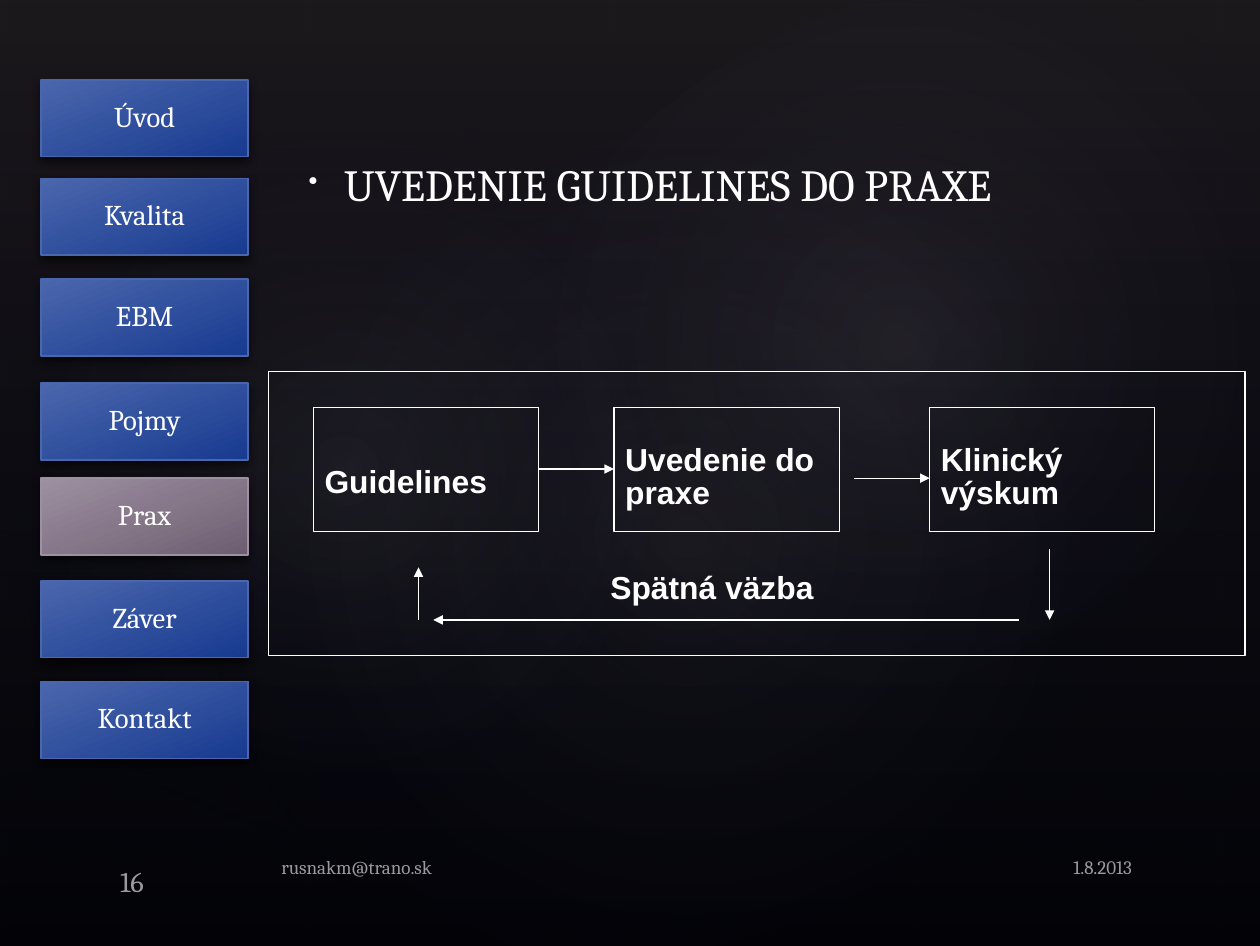
"""Builds the slide on putting guidelines into practice, on a grid of 0.1 inch cells."""
from typing import NamedTuple

from lxml.etree import SubElement
from pptx import Presentation
from pptx.dml.color import RGBColor
from pptx.enum.shapes import MSO_CONNECTOR, MSO_SHAPE
from pptx.enum.text import MSO_ANCHOR, PP_ALIGN
from pptx.oxml.ns import qn
from pptx.util import Inches, Pt

WHITE = RGBColor(0xFF, 0xFF, 0xFF)
BLACK = RGBColor(0x00, 0x00, 0x00)
NAVY = RGBColor(0x24, 0x28, 0x52)
PLUM = RGBColor(0x50, 0x46, 0x52)
MIST = RGBColor(0xC4, 0xBC, 0xC6)
BLUE = RGBColor(0x4A, 0x66, 0xAC)
DEEP = RGBColor(0x18, 0x3A, 0x90)
MAUVE = RGBColor(0x9D, 0x90, 0xA0)
DUSK = RGBColor(0x6E, 0x5E, 0x72)

CELL = Inches(0.1)
COLS, ROWS = 110.2, 82.7


class Area(NamedTuple):
    left: float
    top: float
    width: float
    height: float


class Glow(NamedTuple):
    area: Area
    turn: float
    alpha: int


class Button(NamedTuple):
    text: str
    top: float
    light: RGBColor = BLUE
    dark: RGBColor = DEEP


class Step(NamedTuple):
    text: str
    left: float
    inset: float


class Arrow(NamedTuple):
    x1: float
    y1: float
    x2: float
    y2: float


class Label(NamedTuple):
    text: str
    area: Area
    size: int
    align: PP_ALIGN = PP_ALIGN.LEFT
    anchor: MSO_ANCHOR = MSO_ANCHOR.TOP
    foot: float = 0.6


GLOWS = [
    Glow(Area(16.5, 12.5, 87.3, 68.8), 328.7, 7),
    Glow(Area(-3.3, 14.1, 66.8, 54), 294.3, 8),
    Glow(Area(39.5, 1.4, 78.1, 57.3), 328.7, 8),
]
BUTTONS = [
    Button("Úvod", 7),
    Button("Kvalita", 15.6),
    Button("EBM", 24.4),
    Button("Pojmy", 33.5),
    Button("Prax", 41.8, MAUVE, DUSK),
    Button("Záver", 50.8),
    Button("Kontakt", 59.6),
]
STEPS = [
    Step("Guidelines", 27.4, 5.2),
    Step("Uvedenie do praxe", 53.7, 3.3),
    Step("Klinický výskum", 81.3, 3.3),
]
ARROWS = [
    Arrow(47.1, 41, 53.7, 41),
    Arrow(74.7, 41.8, 81.3, 41.8),
    Arrow(91.8, 48, 91.8, 54.2),
    Arrow(89.1, 54.2, 37.9, 54.2),
    Arrow(36.6, 54.2, 36.6, 49.6),
]
LABELS = [
    Label("1.8.2013", Area(87.4, 74.2, 12.7, 4.4), 12, PP_ALIGN.RIGHT),
    Label("16", Area(9.4, 74.2, 9, 4.4), 18, anchor=MSO_ANCHOR.BOTTOM, foot=0.1),
    Label("rusnakm@trano.sk", Area(23.5, 74.2, 59.9, 4.4), 12),
]


def grid(*cells: float) -> list[int]:
    return [round(cell * CELL) for cell in cells]


def fade(node, *alphas: int) -> None:
    for color, alpha in zip(list(node.iter(qn("a:srgbClr"))), alphas):
        SubElement(color, qn("a:alpha"), val=str(alpha * 1000))


def blend(shape, first: RGBColor, last: RGBColor, angle: float) -> None:
    shape.fill.gradient()
    shape.fill.gradient_angle = 360 - angle
    for stop, color in zip(shape.fill.gradient_stops, (first, last)):
        stop.color.rgb = color


def add_form(slide, kind: MSO_SHAPE, area: Area):
    shape = slide.shapes.add_shape(kind, *grid(*area))
    shape.shadow.inherit = False
    shape.fill.background()
    shape.line.fill.background()
    return shape


def add_frame(slide, area: Area):
    frame = add_form(slide, MSO_SHAPE.RECTANGLE, area)
    frame.line.color.rgb = WHITE
    frame.line.width = Pt(0.75)
    return frame


def write(shape, text: str, face: str, size: int, align=PP_ALIGN.LEFT,
          anchor=MSO_ANCHOR.TOP, wrap: bool = True):
    body = shape.text_frame
    body.word_wrap = wrap
    body.vertical_anchor = anchor
    line = body.paragraphs[0]
    line.text = text
    line.alignment = align
    line.font.name = face
    line.font.size = Pt(size)
    line.font.color.rgb = WHITE
    return line


def pad(shape, foot: float = 0.6) -> None:
    body = shape.text_frame
    body.margin_left, body.margin_top, body.margin_right, body.margin_bottom = grid(
        1.1, 0.6, 1.1, foot)


def add_glow(slide, glow: Glow) -> None:
    shape = add_form(slide, MSO_SHAPE.OVAL, glow.area)
    shape.rotation = glow.turn
    blend(shape, MIST, NAVY, 0)
    shape.fill.gradient_stops[1].position = 0.58
    fill = shape.element.spPr.find(qn("a:gradFill"))
    fade(fill, glow.alpha, 0)
    fill.remove(fill.find(qn("a:lin")))
    ring = SubElement(fill, qn("a:path"), path="circle")
    SubElement(ring, qn("a:fillToRect"), l="50000", t="50000", r="50000", b="50000")


def add_button(slide, button: Button) -> None:
    shape = add_form(slide, MSO_SHAPE.FLOWCHART_PROCESS, Area(3.6, button.top, 18.1, 6.7))
    blend(shape, button.light, button.dark, 69)
    shape.line.color.rgb = button.light
    shape.line.width = Pt(1)
    effects = shape.element.spPr.find(qn("a:effectLst"))
    shade = SubElement(effects, qn("a:outerShdw"), blurRad=str(Pt(6)), dist=str(Pt(3)),
                       dir="5400000", algn="ctr", rotWithShape="0")
    SubElement(shade, qn("a:srgbClr"), val=str(BLACK))
    fade(shade, 60)
    line = write(shape, button.text, "Cambria", 18, PP_ALIGN.CENTER, MSO_ANCHOR.MIDDLE)
    line.line_spacing = 0.87


def add_step(slide, step: Step) -> None:
    frame = add_frame(slide, Area(step.left, 35.6, 19.7, 10.9))
    frame.text_frame.margin_top = grid(step.inset)[0]
    line = write(frame, step.text, "Arial", 20)
    line.font.bold = True
    line.line_spacing = 0.87


def add_arrow(slide, arrow: Arrow) -> None:
    link = slide.shapes.add_connector(MSO_CONNECTOR.STRAIGHT, *grid(*arrow))
    link.line.color.rgb = WHITE
    link.line.width = Pt(0.75)
    SubElement(link.line._get_or_add_ln(), qn("a:tailEnd"), type="triangle")
    SubElement(link.element.spPr, qn("a:effectLst"))


def add_label(slide, label: Label) -> None:
    box = slide.shapes.add_textbox(*grid(*label.area))
    pad(box, label.foot)
    write(box, label.text, "Cambria", label.size, label.align, label.anchor)
    fade(box.element.txBody, 60)


def add_title(slide) -> None:
    box = slide.shapes.add_textbox(*grid(25.7, 8.3, 73.5, 15.6))
    pad(box)
    line = write(box, "UVEDENIE GUIDELINES DO PRAXE", "Cambria", 28, anchor=MSO_ANCHOR.MIDDLE)
    props = line._p.get_or_add_pPr()
    props.set("marL", str(Inches(0.33)))
    props.set("indent", str(Inches(-0.31)))
    size = props.makeelement(qn("a:buSzPct"), {"val": "60000"})
    mark = props.makeelement(qn("a:buChar"), {"char": "•"})
    props.find(qn("a:defRPr")).addprevious(size)
    size.addnext(mark)


def add_loop(slide) -> None:
    box = slide.shapes.add_textbox(*grid(52.4, 49.6, 21, 4.7))
    line = write(box, "Spätná väzba", "Arial", 20, wrap=False)
    line.font.bold = True
    line.line_spacing = 0.87


def main() -> None:
    deck = Presentation()
    deck.slide_width, deck.slide_height = grid(COLS, ROWS)
    slide = deck.slides.add_slide(deck.slide_layouts[6])
    slide.background.fill.solid()
    slide.background.fill.fore_color.rgb = BLACK
    veil = add_form(slide, MSO_SHAPE.RECTANGLE, Area(0, 0, COLS, ROWS))
    blend(veil, PLUM, NAVY, 90)
    fade(veil.element.spPr, 36, 10)
    for glow in GLOWS:
        add_glow(slide, glow)
    add_title(slide)
    for label in LABELS:
        add_label(slide, label)
    add_frame(slide, Area(23.5, 32.5, 85.4, 24.8))
    for step in STEPS:
        add_step(slide, step)
    for arrow in ARROWS:
        add_arrow(slide, arrow)
    add_loop(slide)
    for button in BUTTONS:
        add_button(slide, button)
    deck.save("out.pptx")


if __name__ == "__main__":
    main()
